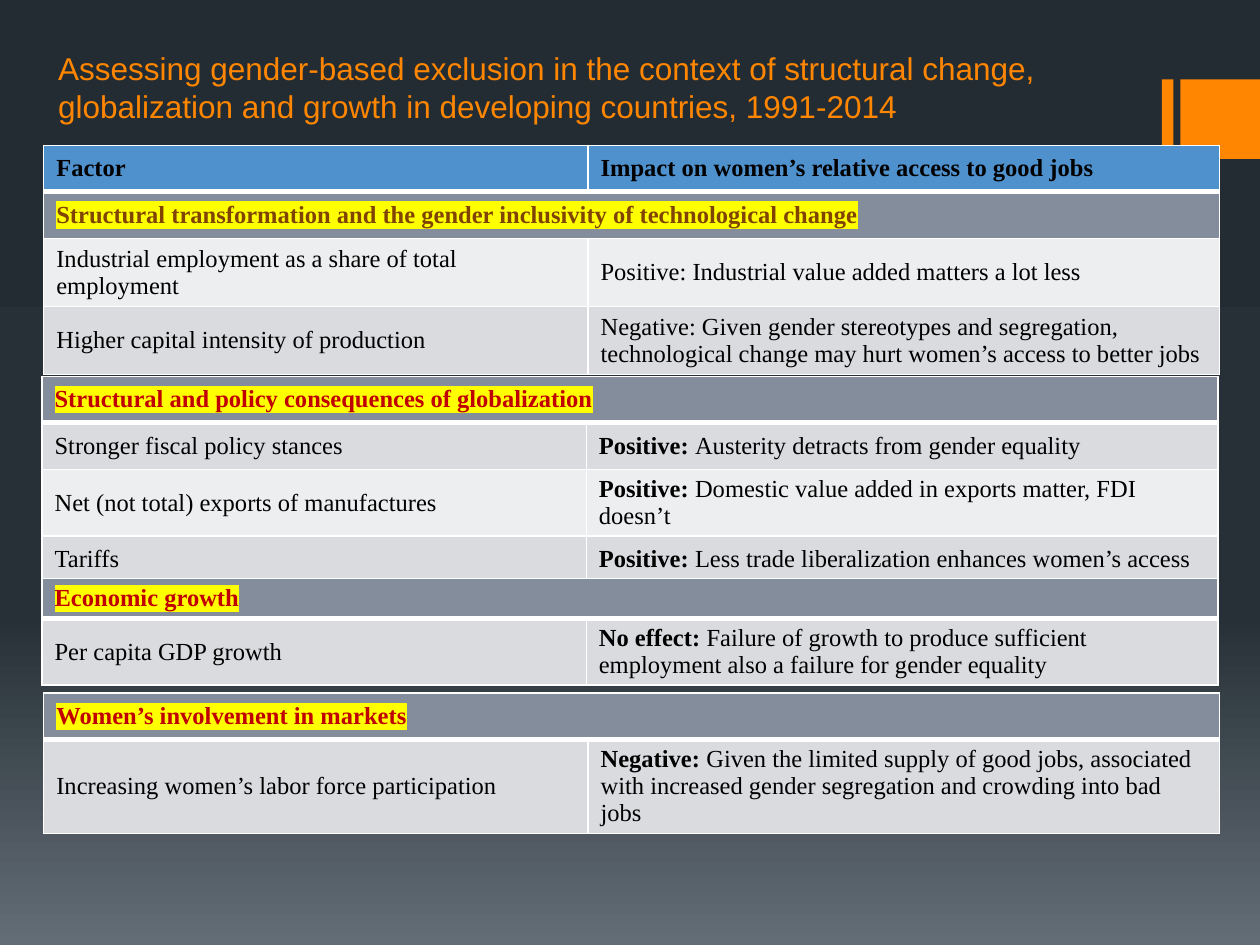
from dataclasses import dataclass

from lxml.etree import SubElement
from pptx import Presentation
from pptx.dml.color import RGBColor
from pptx.enum.shapes import MSO_SHAPE
from pptx.enum.text import MSO_ANCHOR, PP_ALIGN
from pptx.oxml import parse_xml
from pptx.oxml.ns import qn
from pptx.slide import Slide
from pptx.util import Pt


@dataclass(frozen=True)
class Theme:
    accent: str = "FF8600"
    header: str = "4F91CD"
    section: str = "838D9B"
    light: str = "EDEEEF"
    shade: str = "D9DBDE"
    ink: str = "000000"
    brown: str = "804300"
    red: str = "C00000"
    marker: str = "FFFF00"
    rule: str = "FFFFFF"
    backdrop: tuple = ((0, "242C33"), (65, "273037"), (100, "636D76"))
    title_font: str = "Arial"
    table_font: str = "Times New Roman"
    title_size: int = 18
    table_size: int = 14
    thin: int = 1
    thick: int = 3


THEME = Theme()
COLUMNS = (311, 361)
ROW = 26.6
TWO_LINES = 38.9


@dataclass(frozen=True)
class Span:
    text: str
    color: str = THEME.ink
    bold: bool = False
    marker: str = ""


@dataclass(frozen=True)
class Row:
    cells: tuple[tuple[Span, ...], ...]
    fill: str
    height: float = ROW


@dataclass(frozen=True)
class Block:
    left: float
    top: float
    rows: tuple[Row, ...]


def section(text: str, color: str = THEME.red, height: float = ROW) -> Row:
    return Row(((Span(text, color, True, THEME.marker),),), THEME.section, height)


def factor(label: str, lead: str, impact: str, fill: str = THEME.shade, height: float = ROW) -> Row:
    spans = (Span(lead, bold=True), Span(impact)) if lead else (Span(impact),)
    return Row(((Span(label),), spans), fill, height)


HEADER = Row(
    ((Span("Factor", bold=True),), (Span("Impact on women’s relative access to good jobs", bold=True),)),
    THEME.header,
)
BLOCKS = (
    Block(25, 83, (
        HEADER,
        section("Structural transformation and the gender inclusivity of technological change", THEME.brown),
        factor("Industrial employment as a share of total employment", "",
               "Positive: Industrial value added matters a lot less", THEME.light, TWO_LINES),
        factor("Higher capital intensity of production", "",
               "Negative: Given gender stereotypes and segregation, technological change "
               "may hurt women’s access to better jobs", height=TWO_LINES),
    )),
    Block(24, 215, (
        section("Structural and policy consequences of globalization"),
        factor("Stronger fiscal policy stances", "Positive: ", "Austerity detracts from gender equality"),
        factor("Net (not total) exports of manufactures", "Positive: ",
               "Domestic value added in exports matter, FDI doesn’t", THEME.light),
        factor("Tariffs", "Positive: ", "Less trade liberalization enhances women’s access"),
    )),
    Block(24, 330.6, (
        section("Economic growth", height=19.4),
        factor("Per capita GDP growth", "No effect: ",
               "Failure of growth to produce sufficient employment also a failure for gender equality"),
    )),
    Block(25, 396, (
        section("Women’s involvement in markets"),
        factor("Increasing women’s labor force participation", "Negative: ",
               "Given the limited supply of good jobs, associated with increased gender "
               "segregation and crowding into bad jobs", height=44.6),
    )),
)


def paint_background(page: Slide) -> None:
    fill = page.background.fill
    fill.gradient()
    fill.gradient_angle = 270
    stops = page.element.find(".//" + qn("a:gsLst"))
    for stop in list(stops):
        stops.remove(stop)
    for position, color in THEME.backdrop:
        stop = SubElement(stops, qn("a:gs"), pos=str(position * 1000))
        SubElement(stop, qn("a:srgbClr"), val=color)


def draw_bar(page: Slide, left: float, width: float) -> None:
    bar = page.shapes.add_shape(MSO_SHAPE.RECTANGLE, Pt(left), Pt(45.4), Pt(width), Pt(45.4))
    bar.shadow.inherit = False
    bar.fill.solid()
    bar.fill.fore_color.rgb = RGBColor.from_string(THEME.accent)
    bar.line.fill.background()


def write_title(page: Slide, text: str) -> None:
    title = page.shapes.title
    title.left, title.top, title.width, title.height = Pt(26), Pt(24), Pt(622), Pt(51)
    title.text_frame.text = text
    title.text_frame.word_wrap = True
    title.text_frame.vertical_anchor = MSO_ANCHOR.BOTTOM
    para = title.text_frame.paragraphs[0]
    para.alignment = PP_ALIGN.LEFT
    font = para.runs[0].font
    font.name = THEME.title_font
    font.size = Pt(THEME.title_size)
    font.color.rgb = RGBColor.from_string(THEME.accent)


def write_spans(cell, spans: tuple[Span, ...]) -> None:
    para = cell.text_frame.paragraphs[0]
    for span in spans:
        run = para.add_run()
        run.text = span.text
        font = run.font
        font.name = THEME.table_font
        font.size = Pt(THEME.table_size)
        font.bold = span.bold
        font.color.rgb = RGBColor.from_string(span.color)
        if span.marker:
            fill = run.font._element.find(qn("a:solidFill"))
            fill.addnext(parse_xml(
                '<a:highlight xmlns:a="http://schemas.openxmlformats.org/drawingml/2006/main">'
                f'<a:srgbClr val="{span.marker}"/></a:highlight>'
            ))


def draw_borders(cell, row_index: int) -> None:
    widths = {
        "a:lnL": THEME.thin,
        "a:lnR": THEME.thin,
        "a:lnT": THEME.thick if row_index == 1 else THEME.thin,
        "a:lnB": THEME.thick if row_index == 0 else THEME.thin,
    }
    properties = cell._tc.get_or_add_tcPr()
    for tag, width in widths.items():
        line = SubElement(properties, qn(tag), w=str(Pt(width)))
        fill = SubElement(line, qn("a:solidFill"))
        SubElement(fill, qn("a:srgbClr"), val=THEME.rule)


def draw_block(page: Slide, block: Block) -> None:
    height = sum(row.height for row in block.rows)
    table = page.shapes.add_table(
        len(block.rows), len(COLUMNS), Pt(block.left), Pt(block.top), Pt(sum(COLUMNS)), Pt(height)
    ).table
    for column, width in zip(table.columns, COLUMNS):
        column.width = Pt(width)
    for index, row in enumerate(block.rows):
        table.rows[index].height = Pt(row.height)
        for column in range(len(COLUMNS)):
            cell = table.cell(index, column)
            draw_borders(cell, index)
            cell.fill.solid()
            cell.fill.fore_color.rgb = RGBColor.from_string(row.fill)
            cell.vertical_anchor = MSO_ANCHOR.MIDDLE
        if len(row.cells) == 1:
            table.cell(index, 0).merge(table.cell(index, 1))
        for column, spans in enumerate(row.cells):
            write_spans(table.cell(index, column), spans)


def main() -> None:
    deck = Presentation()
    deck.slide_width, deck.slide_height = Pt(720), Pt(540)
    page = deck.slides.add_slide(deck.slide_layouts[5])
    paint_background(page)
    draw_bar(page, 664, 6.5)
    draw_bar(page, 674.6, 45.4)
    write_title(page, "Assessing gender-based exclusion in the context of structural change, "
                      "globalization and growth in developing countries, 1991-2014")
    for block in BLOCKS:
        draw_block(page, block)
    deck.save("out.pptx")


if __name__ == "__main__":
    main()
